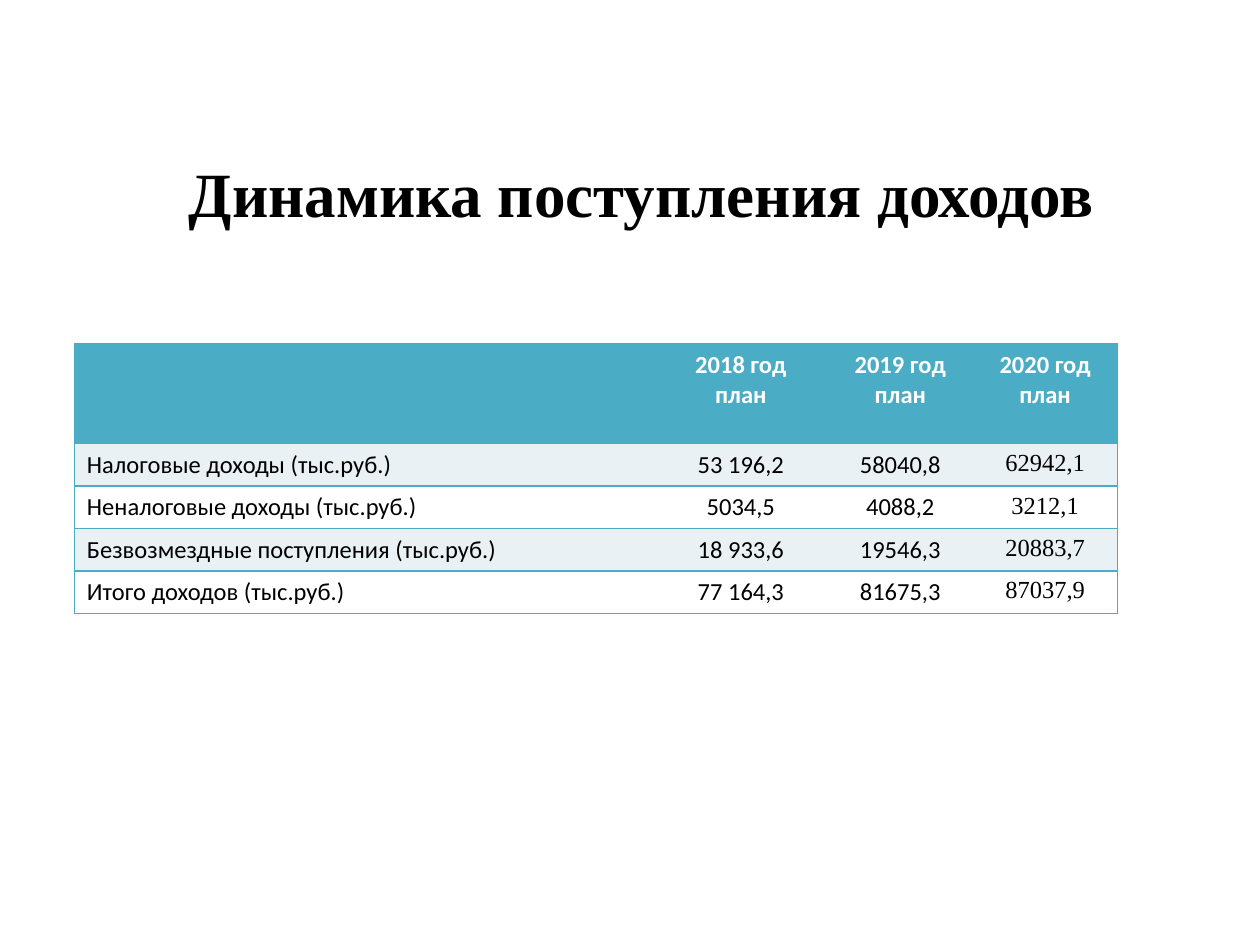
from lxml.etree import SubElement
from pptx import Presentation
from pptx.dml.color import RGBColor
from pptx.enum.text import MSO_ANCHOR, PP_ALIGN
from pptx.oxml.ns import qn
from pptx.util import Inches, Pt

TITLE = "Динамика поступления доходов"
ROWS = [
    ("", "2018 год\nплан", "2019 год план", "2020 год план"),
    ("Налоговые доходы (тыс.руб.)", "53 196,2", "58040,8", "62942,1"),
    ("Неналоговые доходы (тыс.руб.)", "5034,5", "4088,2", "3212,1"),
    ("Безвозмездные поступления (тыс.руб.)", "18 933,6", "19546,3", "20883,7"),
    ("Итого доходов (тыс.руб.)", "77 164,3", "81675,3", "87037,9"),
]
COLORS = {"accent": "4BACC6", "band": "E9F1F5", "white": "FFFFFF", "text": "000000"}
SANS, SERIF = "Calibri", "Times New Roman"
LEFT = 0.59
COLUMN_WIDTHS = (4.6, 1.38, 1.15, 1.15)
HEADER_HEIGHT, ROW_HEIGHT = 0.79, 0.335


def style(paragraph, font_name, size, color, bold, align):
    paragraph.alignment = align
    font = paragraph.font
    font.name, font.size, font.bold = font_name, Pt(size), bold
    font.color.rgb = RGBColor.from_string(COLORS[color])


def set_borders(cell, visible_sides):
    """Draw accent lines on the visible sides and none on the others."""
    properties = cell._tc.get_or_add_tcPr()
    for side in "LRTB":
        line = SubElement(properties, qn(f"a:ln{side}"), w=str(Pt(1)))
        if side in visible_sides:
            fill = SubElement(line, qn("a:solidFill"))
            SubElement(fill, qn("a:srgbClr"), val=COLORS["accent"])
        else:
            SubElement(line, qn("a:noFill"))


def add_title(page):
    box = page.shapes.add_textbox(Inches(LEFT), Inches(1.23), Inches(9), Inches(1.25))
    frame = box.text_frame
    frame.word_wrap = True
    frame.vertical_anchor = MSO_ANCHOR.TOP
    frame.margin_top = 0
    frame.text = TITLE
    style(frame.paragraphs[0], SERIF, 36, "text", True, PP_ALIGN.CENTER)


def add_income_table(page):
    heights = [HEADER_HEIGHT] + [ROW_HEIGHT] * (len(ROWS) - 1)
    table = page.shapes.add_table(
        len(ROWS), len(COLUMN_WIDTHS), Inches(LEFT), Inches(2.73),
        Inches(sum(COLUMN_WIDTHS)), Inches(sum(heights)),
    ).table
    for column, width in zip(table.columns, COLUMN_WIDTHS):
        column.width = Inches(width)
    for row, height in zip(table.rows, heights):
        row.height = Inches(height)

    last = len(COLUMN_WIDTHS) - 1
    for r, values in enumerate(ROWS):
        header = r == 0
        fill = "accent" if header else "band" if r % 2 else "white"
        for c, value in enumerate(values):
            cell = table.cell(r, c)
            set_borders(cell, "TB" + ("L" if c == 0 else "R" if c == last else ""))
            cell.fill.solid()
            cell.fill.fore_color.rgb = RGBColor.from_string(COLORS[fill])
            cell.text = value
            for paragraph in cell.text_frame.paragraphs:
                style(
                    paragraph,
                    SERIF if c == last and not header else SANS,
                    14,
                    "white" if header else "text",
                    header,
                    PP_ALIGN.CENTER if c else PP_ALIGN.LEFT,
                )


def main():
    deck = Presentation()
    deck.slide_width, deck.slide_height = Inches(10), Inches(7.5)
    page = deck.slides.add_slide(deck.slide_layouts[6])
    add_income_table(page)
    add_title(page)
    deck.save("out.pptx")


if __name__ == "__main__":
    main()
